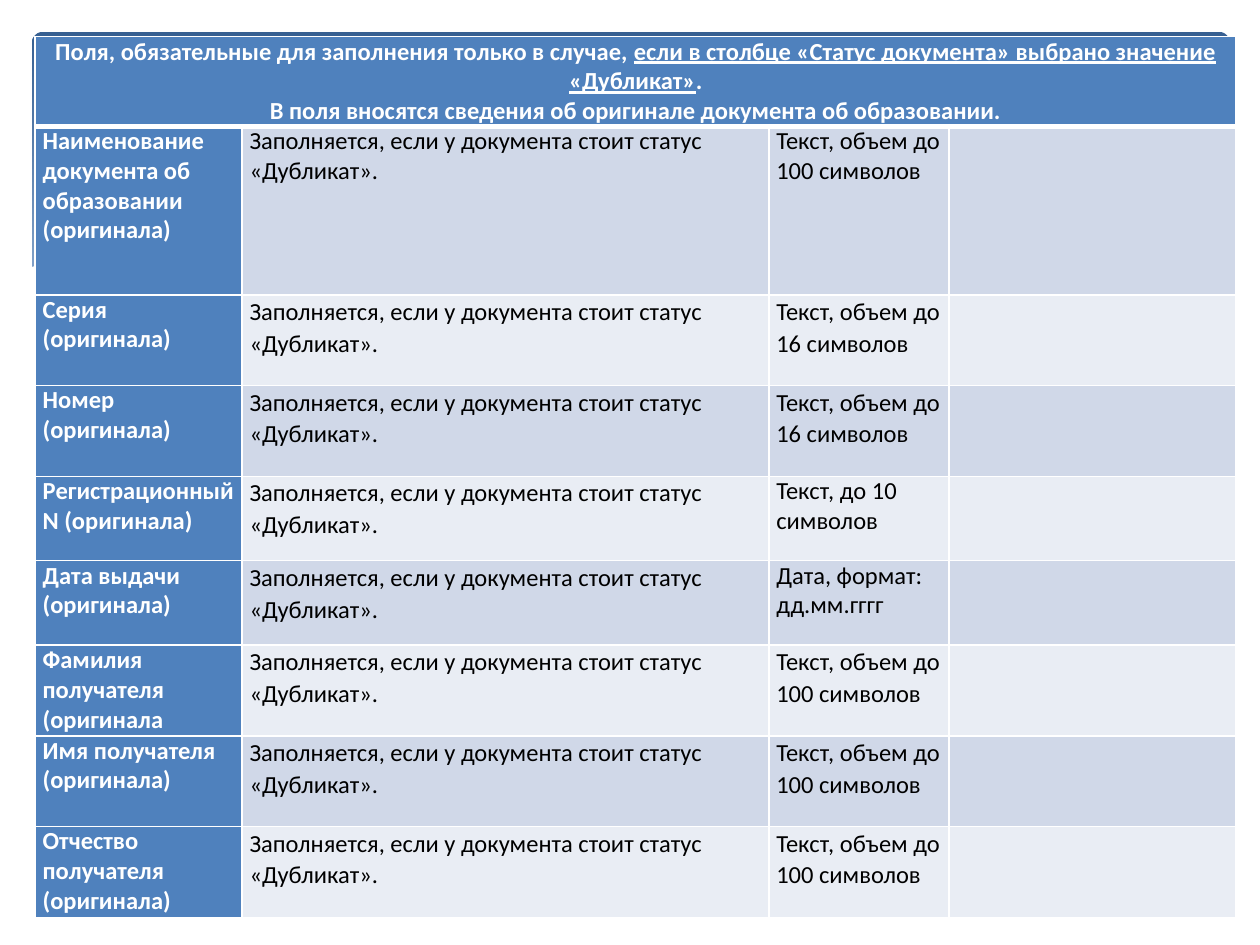
"""Builds a slide with a table of the fields required for a duplicate document."""
from lxml import etree
from pptx import Presentation
from pptx.dml.color import RGBColor
from pptx.enum import shapes, text
from pptx.oxml.ns import qn
from pptx.util import Cm, Pt

BLUE, WHITE, BLACK = "4F81BD", "FFFFFF", "000000"
BANDS = ["D0D8E8", "E9EDF4"]


def rgb(code):
    """Turn a hex string into a colour."""
    return RGBColor.from_string(code)


def write(par, words, color, **form):
    """Add a run of table text to a paragraph."""
    run = par.add_run()
    run.text = words
    run.font.color.rgb = rgb(color)
    for key, val in {"name": "Calibri", "size": Pt(14), **form}.items():
        setattr(run.font, key, val)


deck = Presentation()
deck.slide_width, deck.slide_height = Cm(25.4), Cm(19.05)
slide = deck.slides.add_slide(deck.slide_layouts[6])

panel = slide.shapes.add_shape(
    shapes.MSO_SHAPE.ROUNDED_RECTANGLE, Cm(0.64), Cm(0.64), Cm(24.16), Cm(6.86))
panel.adjustments[0] = 0.034
panel.shadow.inherit = False
panel.line.fill.background()
panel.fill.gradient()
panel.fill.gradient_angle = 270
for stop, (place, code) in zip(panel.fill.gradient_stops, [(0, "376092"), (0.9, "95B3D7")]):
    stop.position, stop.color.rgb = place, rgb(code)

curve = [(0.58, 5.41), (1.5, 5.05), (2.7, 4.8), (4.49, 4.67), (6.35, 4.72), (8.64, 5),
         (11.35, 5.59), (14.1, 6.22), (16.97, 6.73), (19.3, 6.98), (21.26, 7),
         (23.11, 6.78), (24.82, 6.25), (24.82, 8.36), (0.58, 8.36)]
points = [(Cm(x), Cm(y)) for x, y in curve]
pen = slide.shapes.build_freeform(*points[0])
pen.add_line_segments(points[1:], close=True)
wave = pen.convert_to_shape()
wave.shadow.inherit = False
wave.fill.solid()
wave.fill.fore_color.rgb = rgb(WHITE)
wave.line.fill.background()

fill_if = "Заполняется, если у документа стоит статус «Дубликат»."
fields = [
    ("Наименование документа об образовании (оригинала)", "Текст, объем до 100 символов"),
    ("Серия (оригинала)", "Текст, объем до 16 символов"),
    ("Номер (оригинала)", "Текст, объем до 16 символов"),
    ("Регистрационный N (оригинала)", "Текст, до 10 символов"),
    ("Дата выдачи (оригинала)", "Дата, формат: дд.мм.гггг"),
    ("Фамилия получателя (оригинала", "Текст, объем до 100 символов"),
    ("Имя получателя (оригинала)", "Текст, объем до 100 символов"),
    ("Отчество получателя (оригинала)", "Текст, объем до 100 символов"),
]
wide = [4.17, 10.62, 3.63, 5.79]
high = [1.7, 3.4, 1.83, 1.83, 1.7, 1.7, 1.83, 1.83, 1.83]
table = slide.shapes.add_table(
    len(high), len(wide), Cm(0.71), Cm(0.74), Cm(sum(wide)), Cm(sum(high))).table
for col, size in zip(table.columns, wide):
    col.width = Cm(size)
for row, size in zip(table.rows, high):
    row.height = Cm(size)

inset = {"margin_left": Cm(0.15), "margin_right": Cm(0.15), "margin_top": 0, "margin_bottom": 0}
for r, row in enumerate(table.rows):
    for c, cell in enumerate(row.cells):
        for key, val in inset.items():
            setattr(cell, key, val)
        props = cell._tc.get_or_add_tcPr()
        for side in "LRTB":
            thick = 3 if (r, side) in [(0, "B"), (1, "T")] else 1
            line = etree.SubElement(props, qn(f"a:ln{side}"), w=str(Pt(thick)))
            paint = etree.SubElement(line, qn("a:solidFill"))
            etree.SubElement(paint, qn("a:srgbClr"), val=WHITE)
        cell.fill.solid()
        cell.fill.fore_color.rgb = rgb(BLUE if r == 0 or c == 0 else BANDS[(r - 1) % 2])

head = table.cell(0, 0)
head.merge(table.cell(0, 3))
head.vertical_anchor = text.MSO_ANCHOR.MIDDLE
first, second = head.text_frame.paragraphs[0], head.text_frame.add_paragraph()
first.alignment = second.alignment = text.PP_ALIGN.CENTER
for par, words, under in [
    (first, "Поля, обязательные для заполнения только в случае, ", False),
    (first, "если в столбце «Статус документа» выбрано значение «Дубликат»", True),
    (first, ".", False),
    (second, "В поля вносятся сведения об оригинале документа об образовании.", False),
]:
    write(par, words, WHITE, bold=True, underline=under)

for r, (name, kind) in enumerate(fields, 1):
    for c, words in enumerate([name, fill_if, kind]):
        par = table.cell(r, c).text_frame.paragraphs[0]
        write(par, words, BLACK if c else WHITE, bold=c == 0)
        if r > 1 and (c == 1 or c == 2 and r not in (4, 5)):
            par.line_spacing, par.space_after = 1.07, Pt(8)

deck.save("out.pptx")
